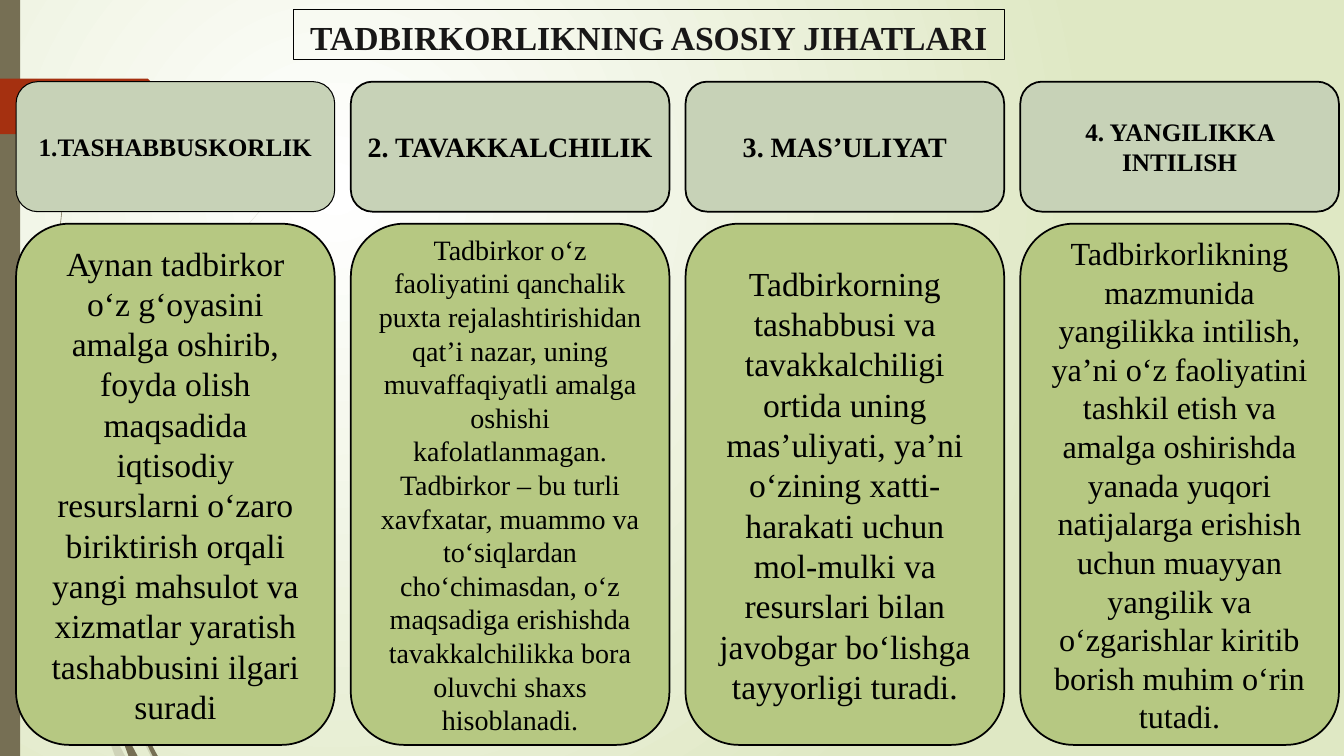
"""Build a slide on the four main aspects of entrepreneurship."""
from lxml import etree
from pptx import Presentation
from pptx import util as u
from pptx.dml.color import RGBColor
from pptx.enum import shapes, text
from pptx.oxml.ns import qn

HEADLINE = "TADBIRKORLIKNING ASOSIY JIHATLARI"
ASPECTS = [
    dict(heading="1.TASHABBUSKORLIK", heading_size=18, heading_border=0.75, body_size=24,
         body="Aynan tadbirkor o‘z g‘oyasini amalga oshirib, foyda olish maqsadida "
              "iqtisodiy resurslarni o‘zaro biriktirish orqali yangi mahsulot va "
              "xizmatlar yaratish tashabbusini ilgari suradi"),
    dict(heading="2. TAVAKKALCHILIK", heading_size=20, heading_border=1.25, body_size=20,
         body="Tadbirkor o‘z faoliyatini qanchalik puxta rejalashtirishidan qat’i nazar, "
              "uning muvaffaqiyatli amalga oshishi kafolatlanmagan. Tadbirkor – bu turli "
              "xavfxatar, muammo va to‘siqlardan cho‘chimasdan, o‘z maqsadiga erishishda "
              "tavakkalchilikka bora oluvchi shaxs hisoblanadi."),
    dict(heading="3. MAS’ULIYAT", heading_size=20, heading_border=1.25, body_size=24,
         body="Tadbirkorning tashabbusi va tavakkalchiligi ortida uning mas’uliyati, "
              "ya’ni o‘zining xatti-harakati uchun mol-mulki va resurslari bilan "
              "javobgar bo‘lishga tayyorligi turadi."),
    dict(heading="4. YANGILIKKA INTILISH", heading_size=18, heading_border=1.25, body_size=23,
         body="Tadbirkorlikning mazmunida yangilikka intilish, ya’ni o‘z faoliyatini "
              "tashkil etish va amalga oshirishda yanada yuqori natijalarga erishish "
              "uchun muayyan yangilik va o‘zgarishlar kiritib borish muhim o‘rin tutadi."),
]

FONT = "Times New Roman"
BLACK, INK = RGBColor(0, 0, 0), RGBColor(0x18, 0x17, 0x17)
BARK, RUST = RGBColor(0x76, 0x6F, 0x54), RGBColor(0xA5, 0x30, 0x10)
SAGE, LEAF = RGBColor(0xC7, 0xD2, 0xB7), RGBColor(0xB6, 0xC8, 0x82)
WHITE, MIST = RGBColor(0xFF, 0xFF, 0xFF), RGBColor(0xDF, 0xE8, 0xC4)

SLIDE_WIDTH, SLIDE_HEIGHT = 13.33, 7.5
CARD_WIDTH, GUTTER, LEFT_MARGIN = 3.16, 0.16, 0.16
HEADING_ROW = dict(top=0.81, height=1.29)
BODY_ROW = dict(top=2.22, height=5.17)
HEADLINE_BOX = (2.91, 0.09, 7.05, 0.5)
TRUNK_BOX = (0, 0, 0.2, SLIDE_HEIGHT)
TAB_BOX = (0, 0.78, 1.74, 0.55)

PALE, SOLID = 20, 100
STEMS = {
    "pale outer stem": dict(tip=(0, 2.85), bend=(0.21, 5.15), root=(1.01, 7.14), thick=0.04, opacity=PALE),
    "pale inner stem": dict(tip=(0.14, 3.45), bend=(0.56, 5.63), root=(1.52, 7.5), thick=0.05, opacity=PALE),
    "pale branch": dict(tip=(3.12, 1.53), bend=(0.99, 3.58), root=(0.86, 5.96), thick=0.03, opacity=PALE),
    "pale foot": dict(tip=(0.93, 6.83), bend=(1.03, 7.14), root=(1.19, 7.5), thick=0.1, opacity=PALE),
    "dark stem": dict(tip=(0.03, 0), bend=(0.04, 2.26), root=(0.57, 4.81), thick=0.02, opacity=SOLID),
    "dark branch": dict(tip=(0.7, 1.41), bend=(0.41, 3.44), root=(0.6, 4.72), thick=0.03, opacity=SOLID),
    "dark root": dict(tip=(1.1, 6.41), bend=(1.26, 6.97), root=(1.54, 7.5), thick=0.05, opacity=SOLID),
    "dark foot": dict(tip=(1.1, 6.91), bend=(1.19, 7.22), root=(1.32, 7.5), thick=0.09, opacity=SOLID),
}
STEM_STEPS = 24


def inches(box):
    return [u.Inches(length) for length in box]


def paint_background(slide):
    fill = slide.background.fill
    fill.gradient()
    for stop, colour in zip(fill.gradient_stops, (WHITE, MIST)):
        stop.color.rgb = colour
    gradient = slide.element.find(".//" + qn("a:gradFill"))
    gradient.remove(gradient.find(qn("a:lin")))
    circle = etree.SubElement(gradient, qn("a:path"), path="circle")
    etree.SubElement(circle, qn("a:fillToRect"), l="50000", t="50000", r="100000", b="100000")


def paint(shape, colour, opacity=SOLID):
    shape.shadow.inherit = False
    shape.fill.solid()
    shape.fill.fore_color.rgb = colour
    shape.line.fill.background()
    if opacity < SOLID:
        tint = shape.element.spPr.find(".//" + qn("a:srgbClr"))
        etree.SubElement(tint, qn("a:alpha"), val=str(opacity * 1000))


def add_block(slide, preset, box, colour):
    block = slide.shapes.add_shape(preset, *inches(box))
    paint(block, colour)
    return block


def quadratic(start, bend, end, t):
    return (1 - t) ** 2 * start + 2 * t * (1 - t) * bend + t ** 2 * end


def add_stem(slide, tip, bend, root, thick, opacity):
    """Draw a curve that widens evenly from its tip to its root."""
    left_edge, right_edge = [], []
    for step in range(STEM_STEPS + 1):
        t = step / STEM_STEPS
        x, y = (quadratic(*axis, t) for axis in zip(tip, bend, root))
        half = thick * t / 2
        left_edge.append(inches((x - half, y)))
        right_edge.append(inches((x + half, y)))
    outline = left_edge + right_edge[::-1]
    builder = slide.shapes.build_freeform(*outline[0])
    builder.add_line_segments(outline[1:], close=True)
    paint(builder.convert_to_shape(), BARK, opacity)


def border(shape, width):
    shape.line.color.rgb = BLACK
    shape.line.width = u.Pt(width)


def write(shape, words, size, colour, bold, anchor):
    frame = shape.text_frame
    frame.vertical_anchor = anchor
    paragraph = frame.paragraphs[0]
    paragraph.alignment = text.PP_ALIGN.CENTER
    run = paragraph.add_run()
    run.text = words
    run.font.name, run.font.size, run.font.bold = FONT, u.Pt(size), bold
    run.font.color.rgb = colour
    return paragraph


def add_headline(slide):
    title = slide.shapes.title
    title.left, title.top, title.width, title.height = inches(HEADLINE_BOX)
    border(title, 0.75)
    paragraph = write(title, HEADLINE, 24, INK, True, text.MSO_ANCHOR.TOP)
    paragraph.line_spacing = 1.07
    title.text_frame.word_wrap = False
    title.text_frame.auto_size = text.MSO_AUTO_SIZE.NONE


def add_card(slide, column, row, words, size, colour, border_width, bold):
    left = LEFT_MARGIN + column * (CARD_WIDTH + GUTTER)
    box = (left, row["top"], CARD_WIDTH, row["height"])
    card = add_block(slide, shapes.MSO_SHAPE.ROUNDED_RECTANGLE, box, colour)
    border(card, border_width)
    card.text_frame.word_wrap = True
    write(card, words, size, BLACK, bold, text.MSO_ANCHOR.MIDDLE)


def main():
    deck = Presentation()
    deck.slide_width, deck.slide_height = inches((SLIDE_WIDTH, SLIDE_HEIGHT))
    slide = deck.slides.add_slide(deck.slide_layouts.get_by_name("Title Only"))
    paint_background(slide)
    for stem in STEMS.values():
        add_stem(slide, **stem)
    add_block(slide, shapes.MSO_SHAPE.RECTANGLE, TRUNK_BOX, BARK)
    add_block(slide, shapes.MSO_SHAPE.PENTAGON, TAB_BOX, RUST)
    add_headline(slide)
    for column, aspect in enumerate(ASPECTS):
        add_card(slide, column, HEADING_ROW, aspect["heading"], aspect["heading_size"],
                 SAGE, aspect["heading_border"], bold=True)
        add_card(slide, column, BODY_ROW, aspect["body"], aspect["body_size"],
                 LEAF, 1.25, bold=False)
    deck.save("out.pptx")


if __name__ == "__main__":
    main()
